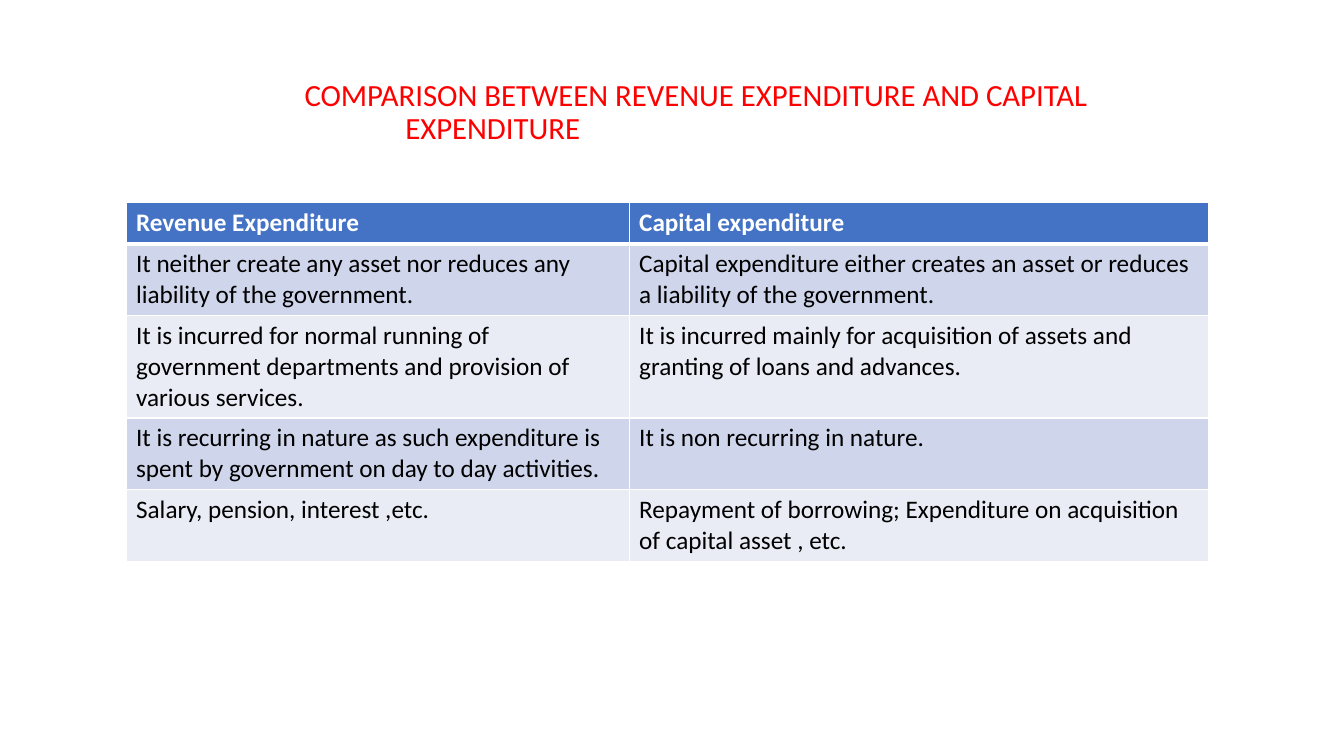
from lxml.etree import SubElement
from pptx import Presentation
from pptx.dml.color import RGBColor
from pptx.enum.text import MSO_ANCHOR, MSO_AUTO_SIZE, PP_ALIGN
from pptx.oxml.ns import qn
from pptx.util import Inches, Pt

ROWS = [
    ("Revenue Expenditure", "Capital expenditure"),
    ("It neither create any asset nor reduces any liability of the government.",
     "Capital expenditure either creates an asset or reduces a liability of the government."),
    ("It is incurred for normal running of government departments and provision of various services.",
     "It is incurred mainly for acquisition of assets and granting of loans and advances."),
    ("It is recurring in nature as such expenditure is spent by government on day to day activities.",
     "It is non recurring in nature."),
    ("Salary, pension, interest ,etc.",
     "Repayment of borrowing; Expenditure on acquisition of capital asset , etc."),
]


def color(code):
    return RGBColor.from_string(code)


class Deck:
    font = "Calibri"
    head = "4472C4"
    bands = ("E9EBF5", "CFD5EA")
    rule = "FFFFFF"

    def __init__(self, show):
        self.slide = show.slides.add_slide(show.slide_layouts[5])

    def label(self, frame, text, code, **format):
        par = frame.paragraphs[0]
        par.alignment = PP_ALIGN.LEFT
        run = par.add_run()
        run.text = text
        for name, value in {"name": self.font, **format}.items():
            setattr(run.font, name, value)
        run.font.color.rgb = color(code)
        return par

    def title(self, text, left, top, width, height):
        shape = self.slide.shapes.title
        place = {"left": left, "top": top, "width": width, "height": height}
        for name, value in place.items():
            setattr(shape, name, Inches(value))
        frame = shape.text_frame
        style = {"word_wrap": True, "auto_size": MSO_AUTO_SIZE.NONE,
                 "vertical_anchor": MSO_ANCHOR.MIDDLE}
        for name, value in style.items():
            setattr(frame, name, value)
        par = self.label(frame, text, "FF0000", size=Pt(22))
        par.line_spacing = 0.9
        props = par._p.get_or_add_pPr()
        props.set("marL", str(Inches(3)))
        props.set("indent", str(Inches(-1)))

    def edge(self, cell, side, width):
        """Draw one border of a cell; side is L, R, T or B."""
        props = cell._tc.get_or_add_tcPr()
        line = SubElement(props, qn(f"a:ln{side}"), w=str(Pt(width)))
        fill = SubElement(line, qn("a:solidFill"))
        SubElement(fill, qn("a:srgbClr"), val=self.rule)

    def table(self, rows, left, top, widths, height):
        grid = self.slide.shapes.add_table(
            len(rows), len(widths), Inches(left), Inches(top),
            Inches(sum(widths)), Inches(height * len(rows))).table
        for col, width in zip(grid.columns, widths):
            col.width = Inches(width)
        for r, texts in enumerate(rows):
            grid.rows[r].height = Inches(height)
            for c, text in enumerate(texts):
                cell = grid.cell(r, c)
                for side in "LRTB":
                    thick = (r, side) in ((0, "B"), (1, "T"))
                    self.edge(cell, side, 3 if thick else 1)
                cell.fill.solid()
                cell.fill.fore_color.rgb = color(self.bands[r % 2] if r else self.head)
                self.label(cell.text_frame, text, "000000" if r else "FFFFFF",
                           size=Pt(18), bold=r == 0)


def main():
    show = Presentation()
    show.slide_width, show.slide_height = Inches(13.33), Inches(7.5)
    deck = Deck(show)
    deck.title("COMPARISON BETWEEN REVENUE EXPENDITURE AND CAPITAL EXPENDITURE",
               0.92, 0.4, 11.5, 1.45)
    deck.table(ROWS, 1.25, 2.01, (4.99, 5.75), 0.41)
    show.save("out.pptx")


if __name__ == "__main__":
    main()
